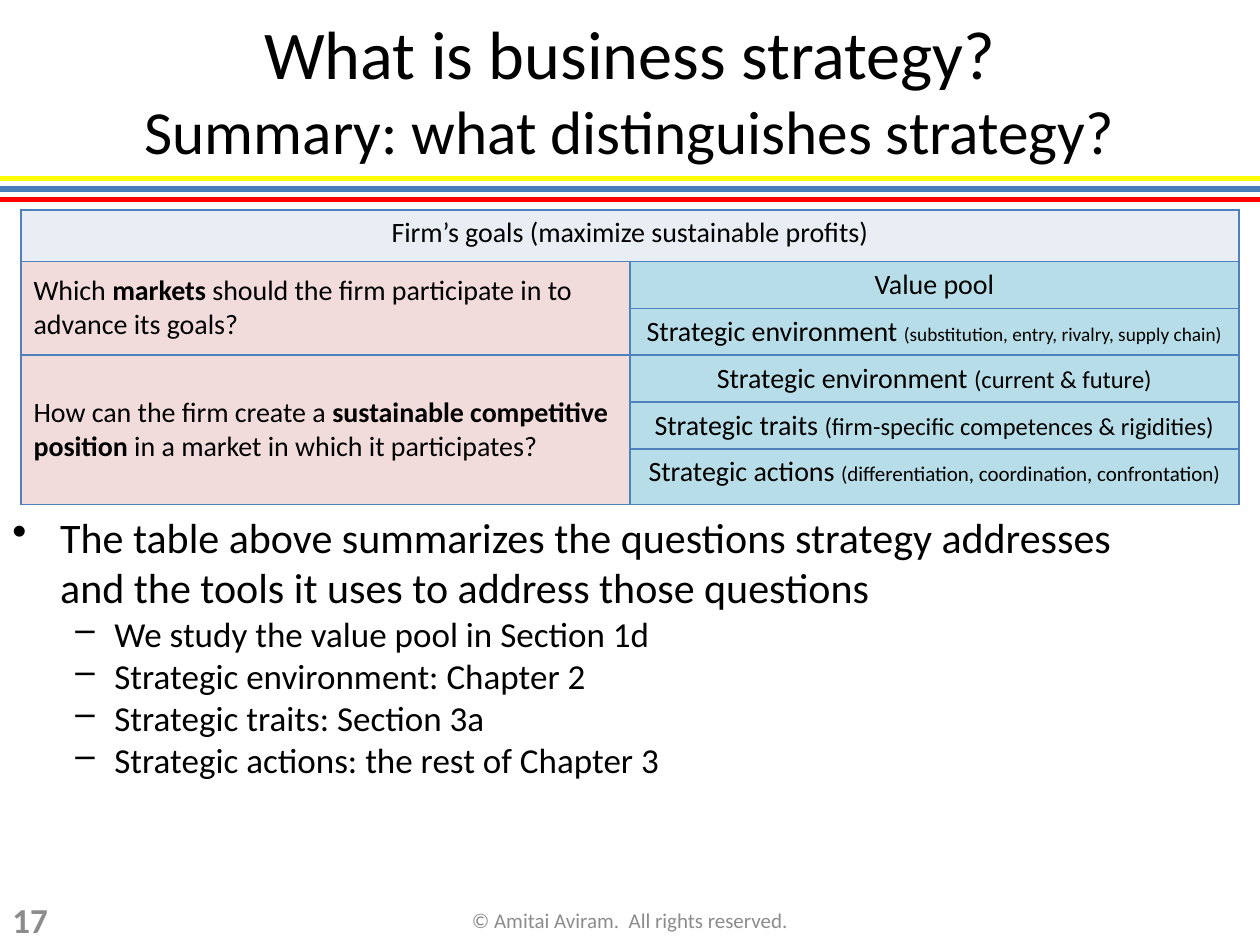
"""Builds the summary slide on what distinguishes business strategy."""
from lxml import etree
from pptx import Presentation
from pptx import util as u
from pptx.dml.color import RGBColor
from pptx.enum import shapes, text
from pptx.oxml import parse_xml
from pptx.oxml.ns import nsdecls, qn

COLUMNS, ROWS = 120, 90
BLACK, GREY = "000000", "8C8C8C"
GOAL, QUESTION, TOOL, BORDER = "E9EDF4", "F2DCDB", "B7DEE8", "4F81BD"
CENTER, LEFT = text.PP_ALIGN.CENTER, text.PP_ALIGN.LEFT


def color(hex_code):
    return RGBColor.from_string(hex_code)


class StrategySlide:
    def __init__(self, font="Calibri"):
        self.font = font
        self.deck = Presentation()
        self.deck.slide_width, self.deck.slide_height = u.Inches(10), u.Inches(7.5)
        self.slide = self.deck.slides.add_slide(self.deck.slide_layouts[5])

    def x(self, columns):
        return round(self.deck.slide_width * columns / COLUMNS)

    def y(self, rows):
        return round(self.deck.slide_height * rows / ROWS)

    def box(self, left, top, width, height):
        return self.x(left), self.y(top), self.x(width), self.y(height)

    def add_words(self, paragraph, runs, size, align=LEFT, ink=BLACK, bold=None):
        paragraph.alignment = align
        paragraph.font.name, paragraph.font.size = self.font, u.Pt(size)
        paragraph.font.color.rgb = color(ink)
        paragraph.font.bold = bold
        for words, run_size, run_bold in runs:
            run = paragraph.add_run()
            run.text = words
            if run_size:
                run.font.size = u.Pt(run_size)
            if run_bold:
                run.font.bold = True

    def title(self, heading, subheading, place):
        title = self.slide.shapes.title
        title.left, title.top, title.width, title.height = self.box(*place)
        frame = title.text_frame
        frame.auto_size = text.MSO_AUTO_SIZE.NONE
        frame.vertical_anchor = text.MSO_ANCHOR.MIDDLE
        line = frame.paragraphs[0]
        self.add_words(line, [(heading, 39, False)], 39, CENTER)
        line.add_line_break()
        self.add_words(line, [(subheading, 35, False)], 39, CENTER)

    def stripe(self, row, ink):
        stripe = self.slide.shapes.add_connector(
            shapes.MSO_CONNECTOR.STRAIGHT, 0, self.y(row), self.x(COLUMNS), self.y(row))
        stripe.line.color.rgb, stripe.line.width = color(ink), u.Pt(3)
        etree.SubElement(stripe._element.spPr, qn("a:effectLst"))

    def textbox(self, place):
        frame = self.slide.shapes.add_textbox(*self.box(*place)).text_frame
        frame.word_wrap = True
        return frame

    def footer(self, words, place, **style):
        frame = self.textbox(place)
        frame.vertical_anchor = text.MSO_ANCHOR.MIDDLE
        self.add_words(frame.paragraphs[0], [(words, None, False)], ink=GREY, **style)

    def bullets(self, items, place):
        marks = {0: ("•", 24, 0.38, 0.38), 1: ("–", 20, 0.81, 0.31)}
        frame = self.textbox(place)
        for index, (level, lines) in enumerate(items):
            item = frame.add_paragraph() if index else frame.paragraphs[0]
            mark, size, margin, hang = marks[level]
            item.level = level
            for number, words in enumerate(lines):
                if number:
                    item.add_line_break()
                self.add_words(item, [(words, size, False)], size)
            properties = item._p.get_or_add_pPr()
            properties.set("marL", str(u.Inches(margin)))
            properties.set("indent", str(-u.Inches(hang)))
            properties.insert(0, parse_xml(f'<a:buChar {nsdecls("a")} char="{mark}"/>'))

    def table(self, place, heights):
        table = self.slide.shapes.add_table(len(heights), 2, *self.box(*place)).table
        table.first_row = table.horz_banding = False
        for row, height in zip(table.rows, heights):
            row.height = self.y(height)
        for cell in table.iter_cells():
            properties = cell._tc.get_or_add_tcPr()
            for side in ("lnL", "lnR", "lnT", "lnB"):
                properties.append(parse_xml(
                    f'<a:{side} {nsdecls("a")} w="{u.Pt(1)}"><a:solidFill>'
                    f'<a:srgbClr val="{BORDER}"/></a:solidFill></a:{side}>'))
        return table

    def cell(self, cell, runs, fill, align=CENTER, anchor=text.MSO_ANCHOR.TOP):
        cell.fill.solid()
        cell.fill.fore_color.rgb = color(fill)
        cell.vertical_anchor = anchor
        self.add_words(cell.text_frame.paragraphs[0], runs, 16, align)


def main():
    page = StrategySlide()
    for row, ink in ((18, "4B7EBC"), (19, "FF0000"), (17, "FFFF00")):
        page.stripe(row, ink)
    page.title("What is business strategy?", "Summary: what distinguishes strategy?",
               (0, 0, COLUMNS, 17))

    grid = page.table((2, 20, 116, 28), [4.9, 4.45, 4.45, 4.45, 4.45, 5.3])
    grid.cell(0, 0).merge(grid.cell(0, 1))
    page.cell(grid.cell(0, 0), [("Firm’s goals (maximize sustainable profits)", 16, False)], GOAL)
    questions = [
        (1, 2, "Which ", "markets", " should the firm participate in to advance its goals?"),
        (3, 5, "How can the firm create a ", "sustainable competitive position",
         " in a market in which it participates?"),
    ]
    for first, last, before, key, after in questions:
        grid.cell(first, 0).merge(grid.cell(last, 0))
        page.cell(grid.cell(first, 0),
                  [(before, 16, False), (key, 16, True), (after, 16, False)],
                  QUESTION, LEFT, text.MSO_ANCHOR.MIDDLE)
    tools = [
        ("Value pool", "", 16),
        ("Strategic environment ", "(substitution, entry, rivalry, supply chain)", 11),
        ("Strategic environment ", "(current & future)", 14),
        ("Strategic traits ", "(firm-specific competences & rigidities)", 14),
        ("Strategic actions ", "(differentiation, coordination, confrontation)", 12),
    ]
    for row, (tool, detail, size) in enumerate(tools, start=1):
        runs = [(tool, 16, False)] + ([(detail, size, False)] if detail else [])
        page.cell(grid.cell(row, 1), runs, TOOL)

    page.bullets([
        (0, ["The table above summarizes the questions strategy addresses",
             "and the tools it uses to address those questions"]),
        (1, ["We study the value pool in Section 1d"]),
        (1, ["Strategic environment: Chapter 2"]),
        (1, ["Strategic traits: Section 3a"]),
        (1, ["Strategic actions: the rest of Chapter 3"]),
    ], (0, 48.1, COLUMNS, 38.9))
    page.footer("17", (0, 85.2, 8, 4.8), size=20, bold=True, align=text.PP_ALIGN.JUSTIFY)
    page.footer("© Amitai Aviram.  All rights reserved.", (41, 85.2, 38, 4.8),
                size=12, align=CENTER)
    page.deck.save("out.pptx")


if __name__ == "__main__":
    main()
